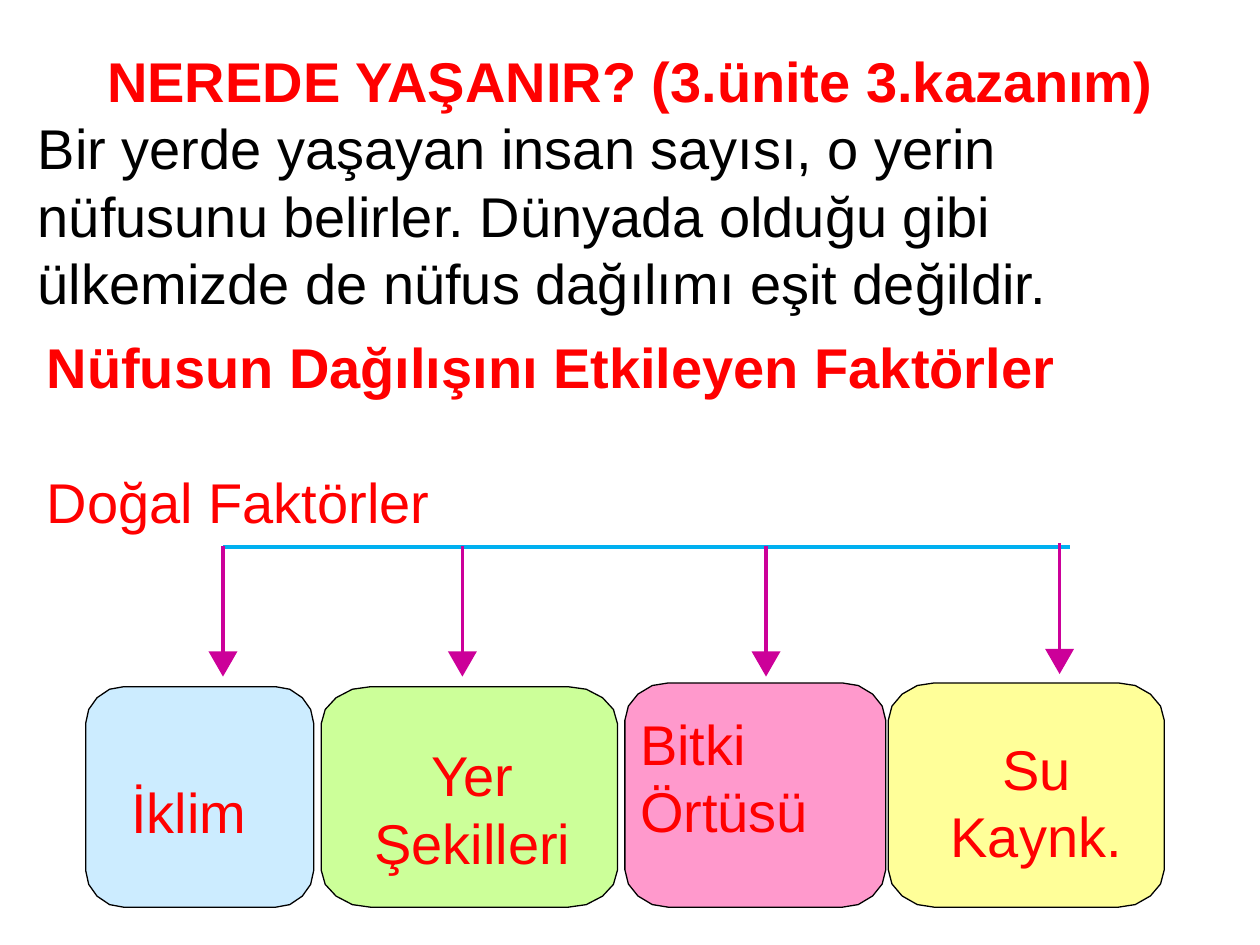
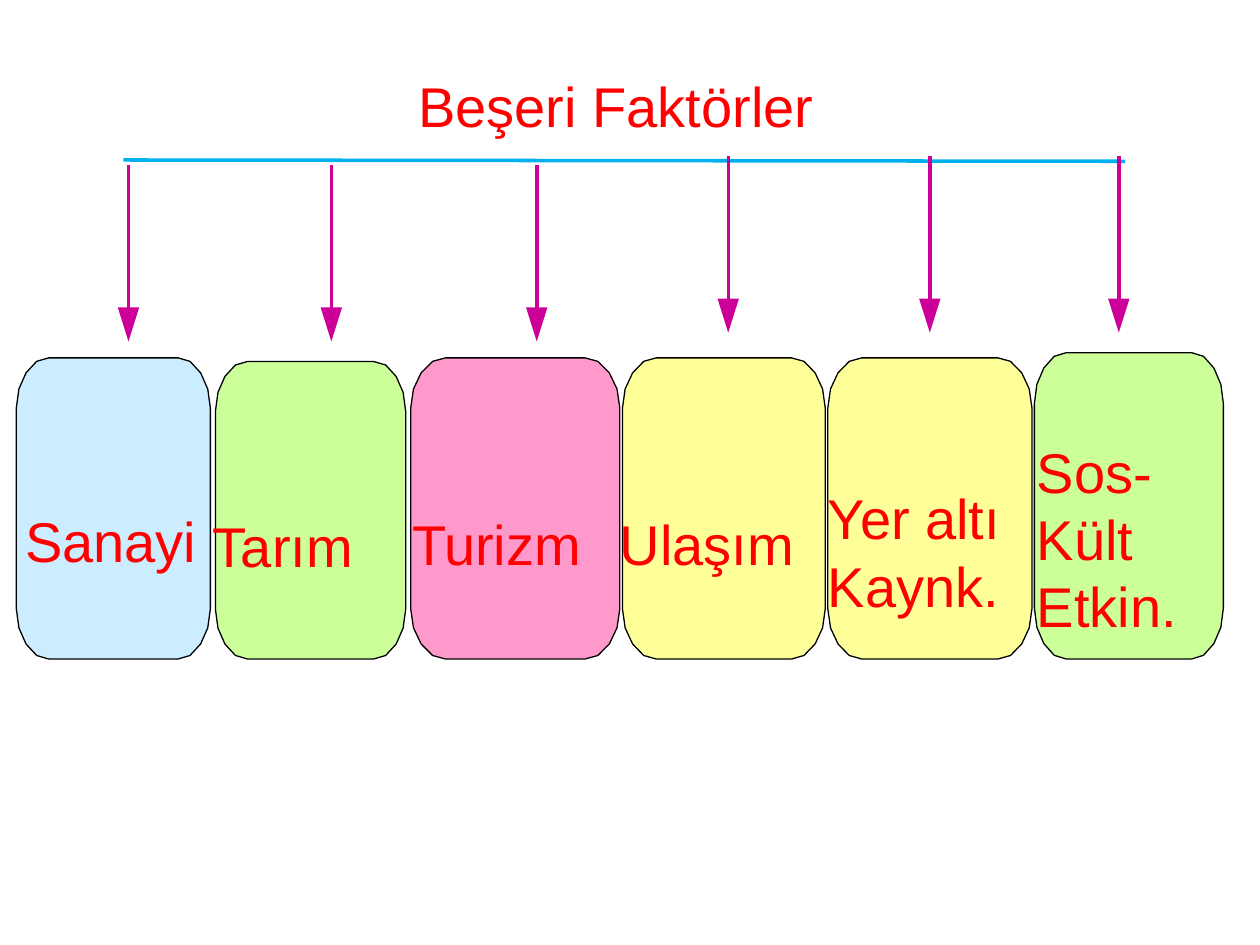
from pptx import Presentation
from pptx import util as u
from pptx.dml.color import RGBColor
from pptx.enum import shapes, text
from pptx.oxml.ns import qn
from lxml import etree

PX = 9144  # 100 px to the inch
RED, BLACK, PINK, AQUA = "FF0000", "000000", "CC0099", "00B0F0"
BLUE, GREEN, ROSE, YELLOW = "CCECFF", "CCFF99", "FF99CC", "FFFF99"
LEFT, MID = text.PP_ALIGN.LEFT, text.PP_ALIGN.CENTER
# One cut corner: shares of the corner's width and height
CORNER = [(1, 0), (.63, .07), (.3, .3), (.08, .62), (0, 1)]


def px(n):
    return u.Emu(round(n * PX))


def rgb(code):
    return RGBColor.from_string(code)


def write(slide, box, lines, align=LEFT):
    """Each line is a string or a (string, format) pair."""
    frame = slide.shapes.add_textbox(*map(px, box)).text_frame
    frame.word_wrap = True
    frame.margin_left = frame.margin_right = 0
    frame.margin_top = frame.margin_bottom = 0
    for i, line in enumerate(lines):
        words, form = (line, {}) if isinstance(line, str) else line
        par = frame.paragraphs[0] if i == 0 else frame.add_paragraph()
        par.alignment = form.get("align", align)
        run = par.add_run()
        run.text = words
        run.font.name, run.font.size = "Arial", u.Pt(32)
        run.font.bold = form.get("bold", False)
        run.font.color.rgb = rgb(form.get("color", RED))


def rule(slide, x1, y1, x2, y2, color):
    line = slide.shapes.add_connector(
        shapes.MSO_CONNECTOR.STRAIGHT, *map(px, (x1, y1, x2, y2)))
    line.line.color.rgb = rgb(color)
    line.line.width = u.Pt(2)
    etree.SubElement(line._element.spPr, qn("a:effectLst"))


def arrow(slide, x, y, stem, wide, high):
    """Stem downwards from x, y with a triangle at its foot."""
    rule(slide, x, y, x, y + stem + 3, PINK)
    head = slide.shapes.add_shape(
        shapes.MSO_SHAPE.FLOWCHART_MERGE,
        *map(px, (x - wide / 2, y + stem, wide, high)))
    head.shadow.inherit = False
    head.fill.solid()
    head.fill.fore_color.rgb = rgb(PINK)
    head.line.fill.background()


def card(slide, x, y, w, h, fill):
    """Box with cut corners, each a sixth of the box."""
    pts = []
    for right, low in ((0, 0), (1, 0), (1, 1), (0, 1)):
        for a, b in CORNER if right != low else CORNER[::-1]:
            a, b = a * w / 6, b * h / 6
            pts.append((px(x + (w - a if right else a)),
                        px(y + (h - b if low else b))))
    pen = slide.shapes.build_freeform(*pts[0])
    pen.add_line_segments(pts[1:], close=True)
    box = pen.convert_to_shape()
    box.shadow.inherit = False
    box.fill.solid()
    box.fill.fore_color.rgb = rgb(fill)
    box.line.color.rgb = rgb(BLACK)
    box.line.width = u.Pt(0.75)


def chart(slide, bus, stem, head, foot, cards):
    """Bus line, arrows and cards; labels are set relative to their card."""
    rule(slide, *bus, AQUA)
    for (x, y, w), fill, tip, (dx, dy, wide), align, lines in cards:
        arrow(slide, *tip, stem, *head)
        card(slide, x, y, w, foot - y, fill)
        write(slide, (x + dx, y + dy, wide, 53 * len(lines)), lines, align)


def natural(slide):
    # Cards: box, fill, arrow start, label offset and width, alignment, lines
    chart(slide, (177, 434, 849, 434), 84, (23, 20), 720, [
        ((68, 545, 181), BLUE, (177, 433), (36, 72, 145), LEFT, ["İklim"]),
        ((255, 545, 235), GREEN, (367, 433), (40, 43, 160), MID,
         ["Yer", "Şekilleri"]),
        ((496, 542, 207), ROSE, (608, 433), (12, 21, 173), LEFT,
         ["Bitki", "Örtüsü"]),
        ((705, 542, 219), YELLOW, (841, 431), (15, 41, 205), MID,
         ["Su", "Kaynk."]),
    ])
    # Title and introduction
    write(slide, (30, 37, 941, 214), [
        ("NEREDE YAŞANIR? (3.ünite 3.kazanım)", dict(bold=True, align=MID)),
        ("Bir yerde yaşayan insan sayısı, o yerin nüfusunu belirler. Dünyada "
         "olduğu gibi ülkemizde de nüfus dağılımı eşit değildir.",
         dict(color=BLACK)),
    ])
    # Headings
    write(slide, (37, 264, 909, 53),
          [("Nüfusun Dağılışını Etkileyen Faktörler", dict(bold=True))])
    write(slide, (37, 371, 909, 53), ["Doğal Faktörler"])


def human(slide):
    chart(slide, (98, 127, 893, 128), 113, (17, 27), 523, [
        ((13, 284, 154), BLUE, (102, 131), (7, 118, 142), LEFT, ["Sanayi"]),
        ((171, 287, 151), GREEN, (263, 131), (-2, 119, 150), LEFT, ["Tarım"]),
        ((326, 284, 166), ROSE, (426, 131), (1, 120, 165), LEFT, ["Turizm"]),
        ((494, 284, 161), YELLOW, (578, 124), (-2, 120, 165), LEFT,
         ["Ulaşım"]),
        ((657, 284, 162), YELLOW, (738, 124), (0, 100, 158), LEFT,
         ["Yer altı", "Kaynk."]),
        ((821, 280, 150), GREEN, (888, 124), (2, 67, 142), LEFT,
         ["Sos- Kült", "Etkin."]),
    ])
    write(slide, (332, 57, 449, 54), ["Beşeri Faktörler"])


def main():
    deck = Presentation()
    deck.slide_width, deck.slide_height = px(1000), px(750)
    for draw in (natural, human):
        draw(deck.slides.add_slide(deck.slide_layouts[6]))
    deck.save("out.pptx")


if __name__ == "__main__":
    main()
